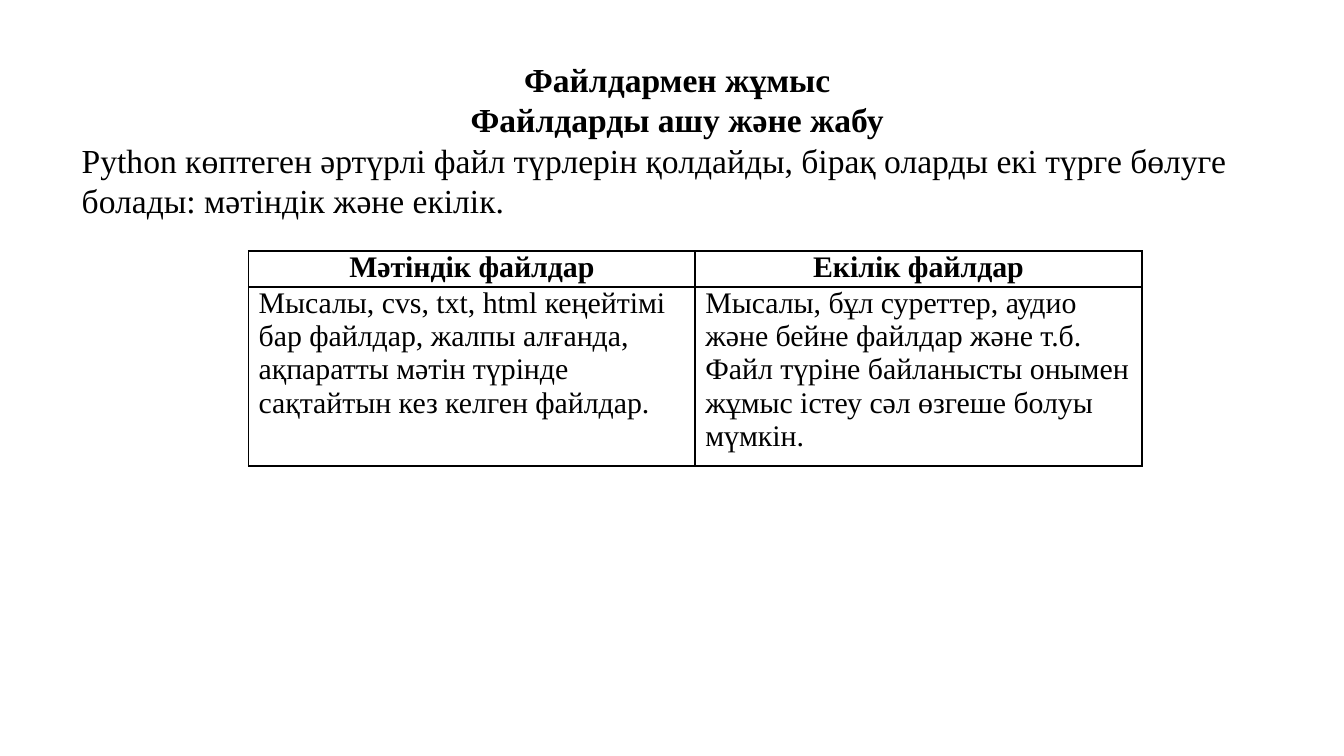
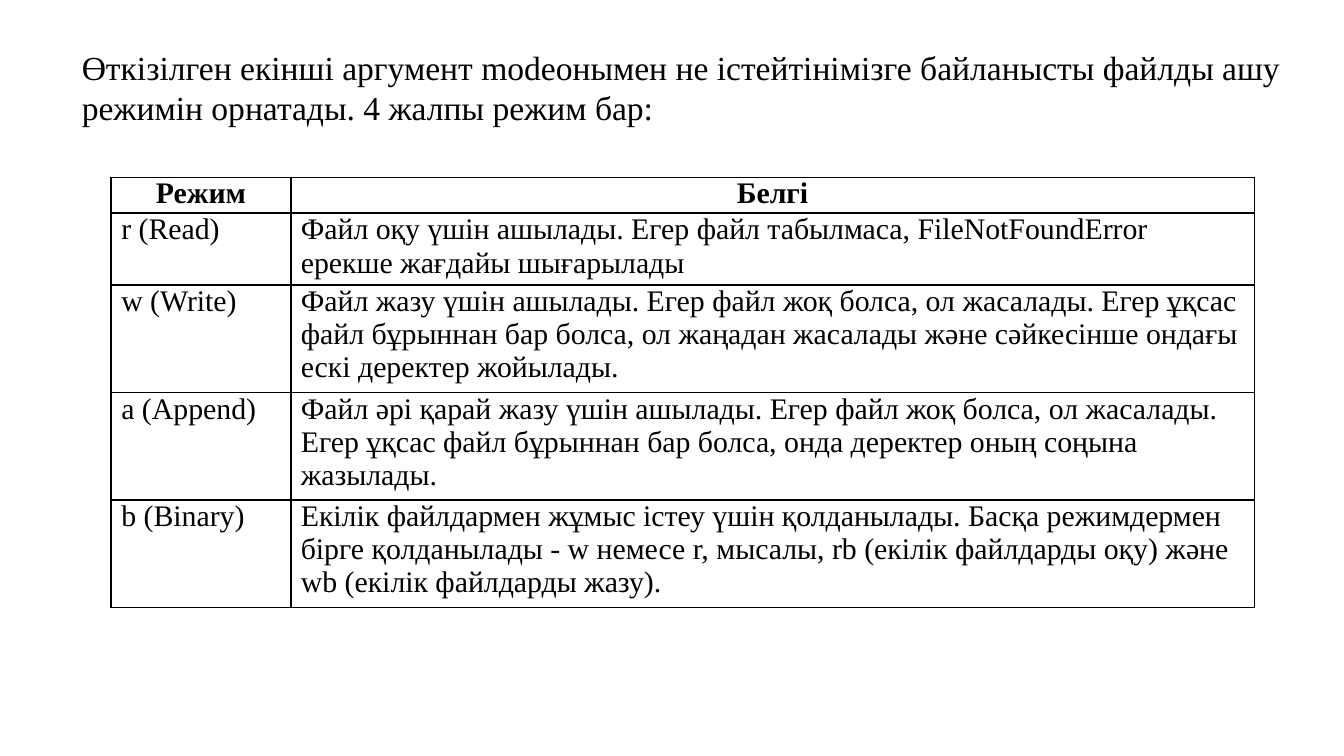
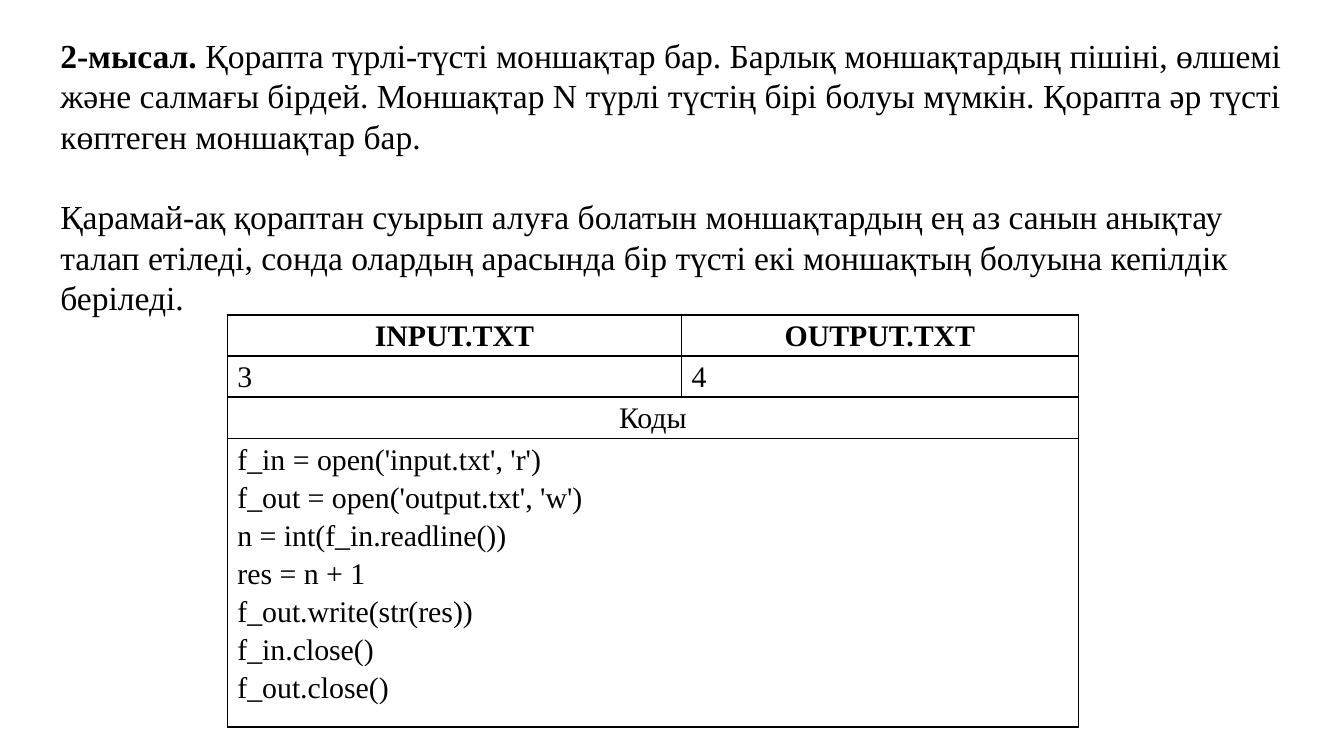
from dataclasses import dataclass

from lxml.etree import SubElement
from pptx import Presentation
from pptx.dml.color import RGBColor
from pptx.enum.text import MSO_ANCHOR, PP_ALIGN
from pptx.oxml.ns import qn
from pptx.util import Pt


@dataclass(frozen=True)
class Theme:
    font: str = "Times New Roman"
    ink: str = "000000"
    paper: str = "FFFFFF"
    body_size: float = 18
    table_size: float = 16
    line_factor: float = 1.2
    border: float = 1
    cell_inset: float = 5.4


THEME = Theme()
BLANK_LAYOUT = 6


# Text
def write_text(frame, text, size=THEME.body_size, bold=False, lead="",
               align=PP_ALIGN.LEFT, spacing=None, after=0):
    """Add a paragraph; the first one fills the paragraph already in the frame."""
    para = frame.paragraphs[0]
    if para.runs:
        para = frame.add_paragraph()
    para.alignment = align
    para.space_after = Pt(after)
    if spacing:
        para.line_spacing = spacing
    for words, heavy in ((lead, True), (text, bold)):
        if words:
            span = para.add_run()
            span.text = words
            span.font.name = THEME.font
            span.font.size = Pt(size)
            span.font.bold = heavy
            span.font.color.rgb = RGBColor.from_string(THEME.ink)


def add_text_box(page, left, top, width, height):
    frame = page.shapes.add_textbox(Pt(left), Pt(top), Pt(width), Pt(height)).text_frame
    frame.word_wrap = True
    return frame


# Table
def draw_borders(cell):
    properties = cell._tc.get_or_add_tcPr()
    for position, side in enumerate(("a:lnL", "a:lnR", "a:lnT", "a:lnB")):
        line = SubElement(properties, qn(side), w=str(Pt(THEME.border)))
        fill = SubElement(line, qn("a:solidFill"))
        SubElement(fill, qn("a:srgbClr"), val=THEME.ink)
        properties.insert(position, line)


def fill_cell(cell, text, **text_format):
    cell.margin_left = cell.margin_right = Pt(THEME.cell_inset)
    cell.margin_top = cell.margin_bottom = 0
    cell.vertical_anchor = MSO_ANCHOR.TOP
    cell.fill.background()
    draw_borders(cell)
    for line in text.split("\n"):
        write_text(cell.text_frame, line, size=THEME.table_size, **text_format)


def add_grid(page, left, top, widths, rows, line_counts, spacing=1, centred=()):
    """Rows are as tall as their line counts; a one-item row spans all columns."""
    line_height = THEME.table_size * THEME.line_factor * spacing
    table = page.shapes.add_table(
        len(rows), len(widths), Pt(left), Pt(top),
        Pt(sum(widths)), Pt(line_height * sum(line_counts))).table
    table.first_row = table.horz_banding = False
    for column, width in zip(table.columns, widths):
        column.width = Pt(width)
    for index, (texts, lines) in enumerate(zip(rows, line_counts)):
        table.rows[index].height = Pt(line_height * lines)
        middle = index == 0 or index in centred
        for column in range(len(widths)):
            text = texts[column] if column < len(texts) else ""
            fill_cell(table.cell(index, column), text, bold=index == 0,
                      spacing=spacing,
                      align=PP_ALIGN.CENTER if middle else PP_ALIGN.LEFT)
        if len(texts) == 1:
            table.cell(index, 0).merge(table.cell(index, len(widths) - 1))


# Slides
def add_page(deck):
    page = deck.slides.add_slide(deck.slide_layouts[BLANK_LAYOUT])
    page.background.fill.solid()
    page.background.fill.fore_color.rgb = RGBColor.from_string(THEME.paper)
    return page


def build_file_types(page):
    intro = add_text_box(page, 36.7, 28, 652.3, 94.3)
    for heading in ("Файлдармен жұмыс", "Файлдарды ашу және жабу"):
        write_text(intro, heading, bold=True, align=PP_ALIGN.CENTER)
    write_text(intro, "Python көптеген әртүрлі файл түрлерін қолдайды, бірақ оларды "
                      "екі түрге бөлуге болады: мәтіндік және екілік.")
    add_grid(page, 133.2, 134.5, (239.3, 239.3), (
        ("Мәтіндік файлдар", "Екілік файлдар"),
        ("Мысалы, cvs, txt, html кеңейтімі бар файлдар, жалпы алғанда, "
         "ақпаратты мәтін түрінде сақтайтын кез келген файлдар.",
         "Мысалы, бұл суреттер, аудио және бейне файлдар және т.б. Файл түріне "
         "байланысты онымен жұмыс істеу сәл өзгеше болуы мүмкін."),
    ), line_counts=(1, 5))


def build_open_modes(page):
    intro = add_text_box(page, 36.7, 21.6, 657.5, 72.7)
    write_text(intro, "Өткізілген екінші аргумент modeонымен не істейтінімізге "
                      "байланысты файлды ашу режимін орнатады. 4 жалпы режим бар:")
    add_grid(page, 59.6, 95, (96.2, 516.2), (
        ("Режим", "Белгі"),
        ("r (Read)",
         "Файл оқу үшін ашылады. Егер файл табылмаса, FileNotFoundError "
         "ерекше жағдайы шығарылады"),
        ("w (Write)",
         "Файл жазу үшін ашылады. Егер файл жоқ болса, ол жасалады. Егер ұқсас "
         "файл бұрыннан бар болса, ол жаңадан жасалады және сәйкесінше ондағы "
         "ескі деректер жойылады."),
        ("a (Append)",
         "Файл әрі қарай жазу үшін ашылады. Егер файл жоқ болса, ол жасалады. "
         "Егер ұқсас файл бұрыннан бар болса, онда деректер оның соңына жазылады."),
        ("b (Binary)",
         "Екілік файлдармен жұмыс істеу үшін қолданылады. Басқа режимдермен "
         "бірге қолданылады - w немесе r, мысалы, rb (екілік файлдарды оқу) "
         "және wb (екілік файлдарды жазу)."),
    ), line_counts=(1, 2, 3, 3, 3))


def build_bead_example(page):
    task = add_text_box(page, 25.2, 15.1, 680.4, 181.4)
    write_text(task, "Қорапта түрлі-түсті моншақтар бар. Барлық моншақтардың пішіні, "
                     "өлшемі және салмағы бірдей. Моншақтар N түрлі түстің бірі болуы "
                     "мүмкін. Қорапта әр түсті көптеген моншақтар бар.",
               lead="2-мысал. ", after=THEME.body_size * THEME.line_factor)
    write_text(task, "Қарамай-ақ қораптан суырып алуға болатын моншақтардың ең аз "
                     "санын анықтау талап етіледі, сонда олардың арасында бір түсті "
                     "екі моншақтың болуына кепілдік беріледі.")
    code = "\n".join((
        "f_in = open('input.txt', 'r')",
        "f_out = open('output.txt', 'w')",
        "n = int(f_in.readline())",
        "res = n + 1",
        "f_out.write(str(res))",
        "f_in.close()",
        "f_out.close()",
    ))
    add_grid(page, 121.8, 168.6, (243.3, 212.6), (
        ("INPUT.TXT", "OUTPUT.TXT"), ("3", "4"), ("Коды",), (code,),
    ), line_counts=(1, 1, 1, 7), spacing=1.15, centred=(2,))


def main():
    deck = Presentation()
    deck.slide_width, deck.slide_height = Pt(720), Pt(405)
    for build in (build_file_types, build_open_modes, build_bead_example):
        build(add_page(deck))
    deck.save("out.pptx")


if __name__ == "__main__":
    main()
